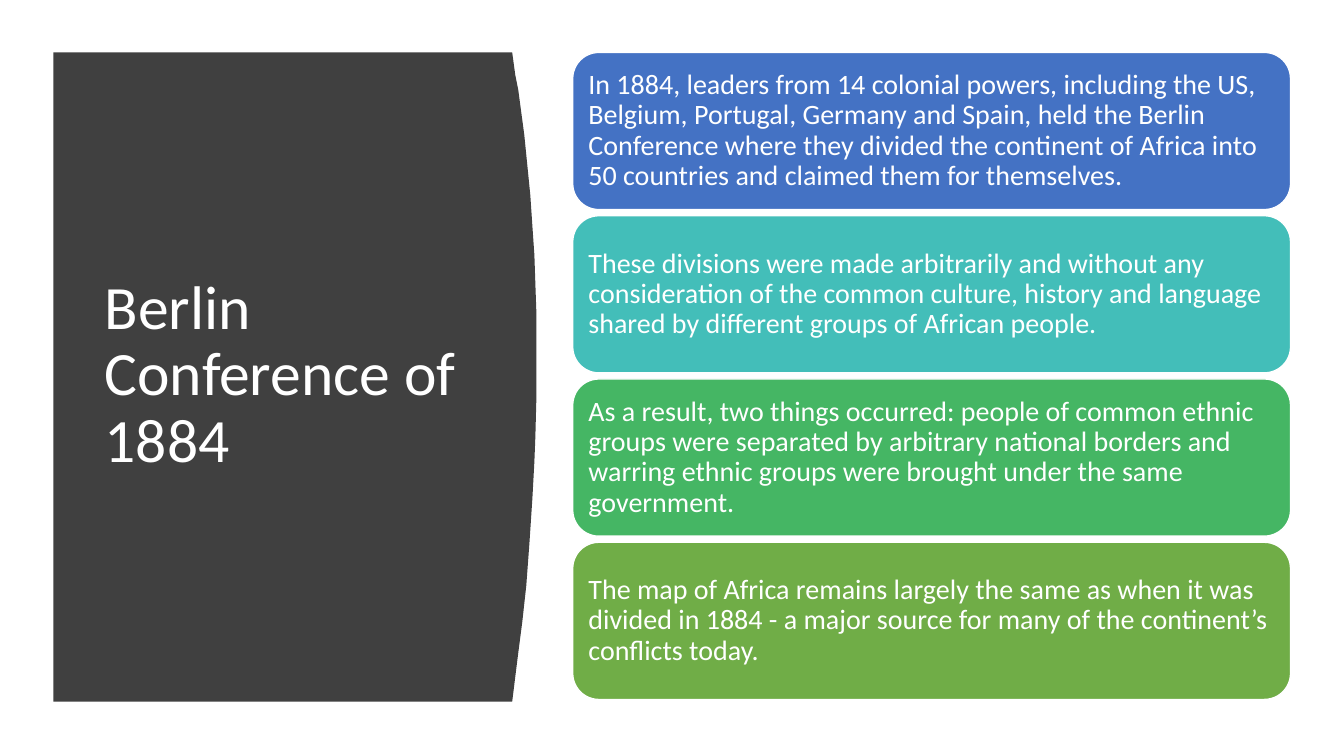
from pptx import Presentation
from pptx.dml.color import RGBColor
from pptx.enum.shapes import MSO_SHAPE
from pptx.enum.text import MSO_ANCHOR, PP_ALIGN
from pptx.util import Pt

PX = 9144
WHITE = "FFFFFF"


def color(hex_code):
    return RGBColor.from_string(hex_code)


def write(frame, text, size, inset_x, inset_y):
    frame.word_wrap = True
    frame.vertical_anchor = MSO_ANCHOR.MIDDLE
    frame.margin_left = frame.margin_right = inset_x * PX
    frame.margin_top = frame.margin_bottom = inset_y * PX
    paragraph = frame.paragraphs[0]
    paragraph.text = text
    paragraph.alignment = PP_ALIGN.LEFT
    paragraph.line_spacing = 0.9
    paragraph.font.name = "Calibri"
    paragraph.font.size = Pt(size)
    paragraph.font.color.rgb = color(WHITE)


prs = Presentation()
prs.slide_width = 1333 * PX
prs.slide_height = 750 * PX
slide = prs.slides.add_slide(prs.slide_layouts[6])

curved_edge = [
    (508, 52), (511, 74), (514, 89), (516, 104), (518, 119), (520, 134),
    (523, 164), (526, 194), (528, 224), (530, 253), (531, 282), (532, 311),
    (532, 394), (531, 433), (530, 458), (528, 495), (525, 540), (522, 581),
    (518, 617), (514, 648), (511, 672), (508, 696),
]
outline = slide.shapes.build_freeform(53, 52, scale=PX)
outline.add_line_segments(curved_edge + [(53, 696)], close=True)
title_panel = outline.convert_to_shape()
title_panel.shadow.inherit = False
title_panel.fill.solid()
title_panel.fill.fore_color.rgb = color("404040")
title_panel.line.fill.background()

title = slide.shapes.add_textbox(94 * PX, 111 * PX, 374 * PX, 524 * PX)
write(title.text_frame, "Berlin Conference of 1884", 44, 10, 5)

facts = [
    ("4472C4", "In 1884, leaders from 14 colonial powers, including the US, Belgium, "
     "Portugal, Germany and Spain, held the Berlin Conference where they divided the "
     "continent of Africa into 50 countries and claimed them for themselves."),
    ("43BEB9", "These divisions were made arbitrarily and without any consideration of "
     "the common culture, history and language shared by different groups of African people."),
    ("45B664", "As a result, two things occurred: people of common ethnic groups were "
     "separated by arbitrary national borders and warring ethnic groups were brought "
     "under the same government."),
    ("70AD47", "The map of Africa remains largely the same as when it was divided in "
     "1884 - a major source for many of the continent’s conflicts today."),
]
FACT_TOP, FACT_HEIGHT, FACT_GAP = 52, 156, 6
for index, (fill, text) in enumerate(facts):
    top = FACT_TOP + index * (FACT_HEIGHT + FACT_GAP)
    fact = slide.shapes.add_shape(
        MSO_SHAPE.ROUNDED_RECTANGLE, 568 * PX, top * PX, 712 * PX, FACT_HEIGHT * PX)
    fact.shadow.inherit = False
    fact.fill.solid()
    fact.fill.fore_color.rgb = color(fill)
    fact.line.color.rgb = color(WHITE)
    fact.line.width = Pt(1)
    write(fact.text_frame, text, 20, 8, 8)

prs.save("out.pptx")
